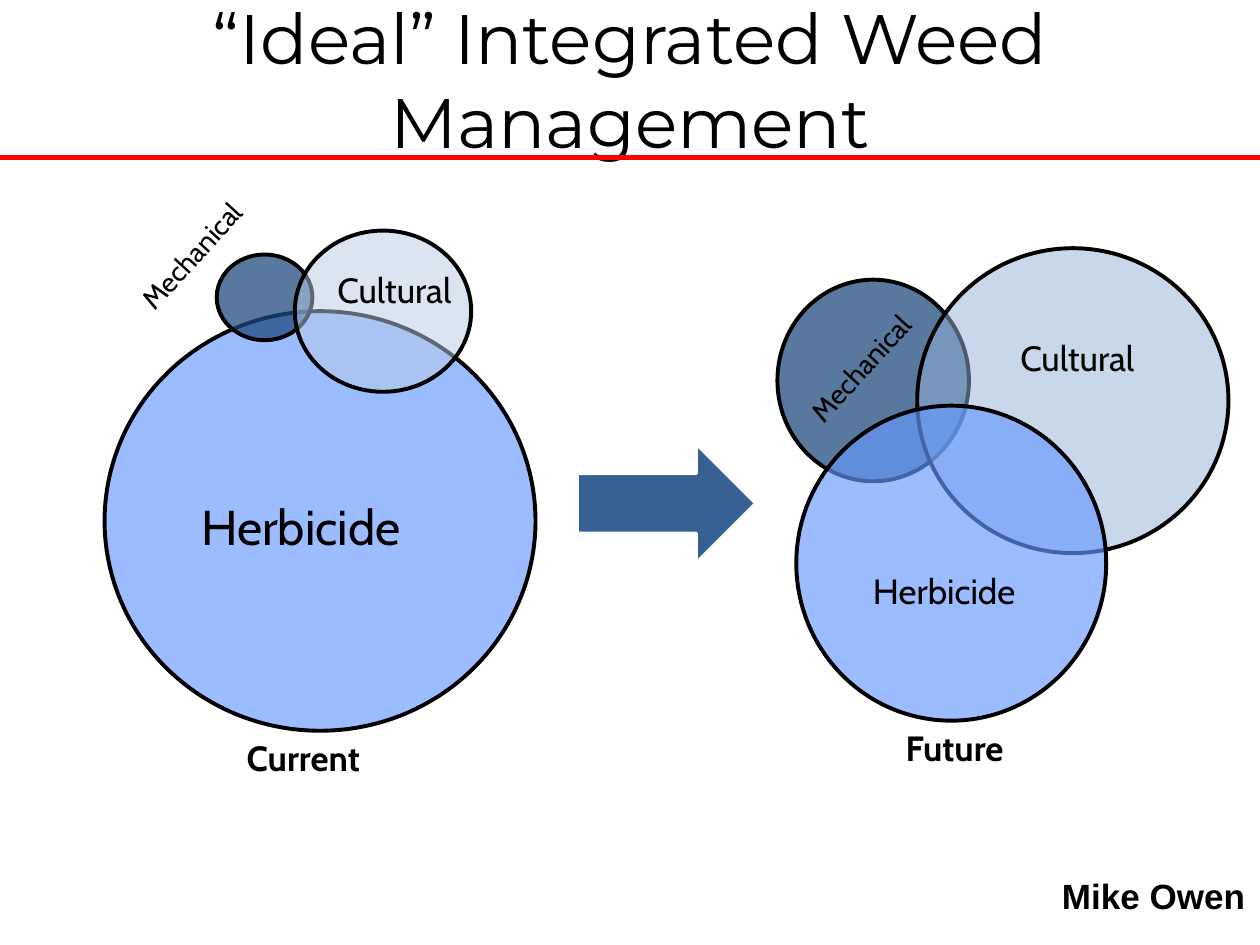
from lxml.etree import SubElement
from pptx import Presentation
from pptx.dml.color import RGBColor
from pptx.enum.shapes import MSO_CONNECTOR, MSO_SHAPE
from pptx.enum.text import MSO_ANCHOR, MSO_AUTO_SIZE, PP_ALIGN
from pptx.oxml.ns import qn
from pptx.util import Inches, Pt

BLACK = RGBColor(0x00, 0x00, 0x00)
WHITE = RGBColor(0xFF, 0xFF, 0xFF)
RED = RGBColor(0xFF, 0x00, 0x00)
NAVY = RGBColor(0x1F, 0x49, 0x7D)
STEEL = RGBColor(0x37, 0x60, 0x92)
MIST = RGBColor(0x95, 0xB3, 0xD7)
PALE = RGBColor(0xB9, 0xCD, 0xE5)
SKY = RGBColor(0x66, 0x99, 0xFF)
TILT = 312.5

deck = Presentation()
deck.slide_width, deck.slide_height = Inches(10), Inches(7.5)
slide = deck.slides.add_slide(deck.slide_layouts[5])
shapes = slide.shapes


def write(frame, text, size=20, font="Cabin", bold=False, align=PP_ALIGN.LEFT):
    para = frame.paragraphs[0]
    para.alignment = align
    run = para.add_run()
    run.text = text
    run.font.size = Pt(size)
    run.font.name = font
    run.font.bold = bold
    run.font.color.rgb = BLACK


def paint(shape, fill, line, width):
    """Give a shape its fill and outline, without a shadow."""
    shape.shadow.inherit = False
    shape.fill.solid()
    shape.fill.fore_color.rgb = fill
    shape.line.color.rgb = line
    shape.line.width = Pt(width)


# Title
title = shapes.title
title.left, title.top = Inches(0), Inches(0)
title.width, title.height = Inches(10), Inches(1.25)
title.text_frame.vertical_anchor = MSO_ANCHOR.MIDDLE
title.text_frame.auto_size = MSO_AUTO_SIZE.NONE
write(title.text_frame, "“Ideal” Integrated Weed Management",
      size=40, font="Montserrat", align=PP_ALIGN.CENTER)

# Circles: future, then current; opacity in percent
circles = [
    (6.17, 2.22, 1.52, 1.6, NAVY, 74),
    (7.28, 1.97, 2.47, 2.42, MIST, 51),
    (6.32, 3.22, 2.46, 2.5, SKY, 65),
    (0.83, 2.47, 3.42, 3.33, SKY, 65),
    (1.72, 2.02, 0.76, 0.68, NAVY, 74),
    (2.34, 1.83, 1.4, 1.28, PALE, 51),
]
for left, top, width, height, color, alpha in circles:
    oval = shapes.add_shape(MSO_SHAPE.OVAL, Inches(left), Inches(top),
                            Inches(width), Inches(height))
    paint(oval, color, BLACK, 2.25)
    tint = oval.fill._xPr.find(qn("a:solidFill"))[0]
    SubElement(tint, qn("a:alpha"), val=str(alpha * 1000))

# Labels
labels = [
    ("Mechanical", 6.2, 2.72, 1.29, 0.37, TILT, dict(size=16)),
    ("Cultural", 8, 2.62, 1.15, 0.44, 0, {}),
    ("Herbicide", 6.83, 4.47, 1.36, 0.44, 0, {}),
    ("Herbicide", 1.5, 3.89, 1.82, 0.57, 0, dict(size=28)),
    ("Mechanical", 0.89, 1.83, 1.28, 0.37, TILT, dict(size=16)),
    ("Cultural", 2.58, 2.08, 1.15, 0.44, 0, {}),
    ("Current", 1.86, 5.8, 1.27, 0.44, 0, dict(bold=True)),
    ("Future", 7.09, 5.72, 1.13, 0.44, 0, dict(bold=True)),
    ("Mike Owen", 8.33, 6.89, 1.67, 0.44, 0, dict(font="Arial", bold=True)),
]
for text, left, top, width, height, turn, style in labels:
    box = shapes.add_textbox(Inches(left), Inches(top),
                             Inches(width), Inches(height))
    box.rotation = turn
    box.text_frame.word_wrap = text == "Mike Owen"
    box.text_frame.auto_size = MSO_AUTO_SIZE.SHAPE_TO_FIT_TEXT
    write(box.text_frame, text, **style)

# Arrow from current to future
arrow = shapes.add_shape(MSO_SHAPE.RIGHT_ARROW, Inches(4.58), Inches(3.52),
                         Inches(1.42), Inches(0.95))
paint(arrow, STEEL, WHITE, 2)

# Rule below the title
rule = shapes.add_connector(MSO_CONNECTOR.STRAIGHT, Inches(0), Inches(1.25),
                            Inches(10), Inches(1.25))
rule.line.color.rgb = RED
rule.line.width = Pt(3)
SubElement(rule._element.spPr, qn("a:effectLst"))

deck.save("out.pptx")
